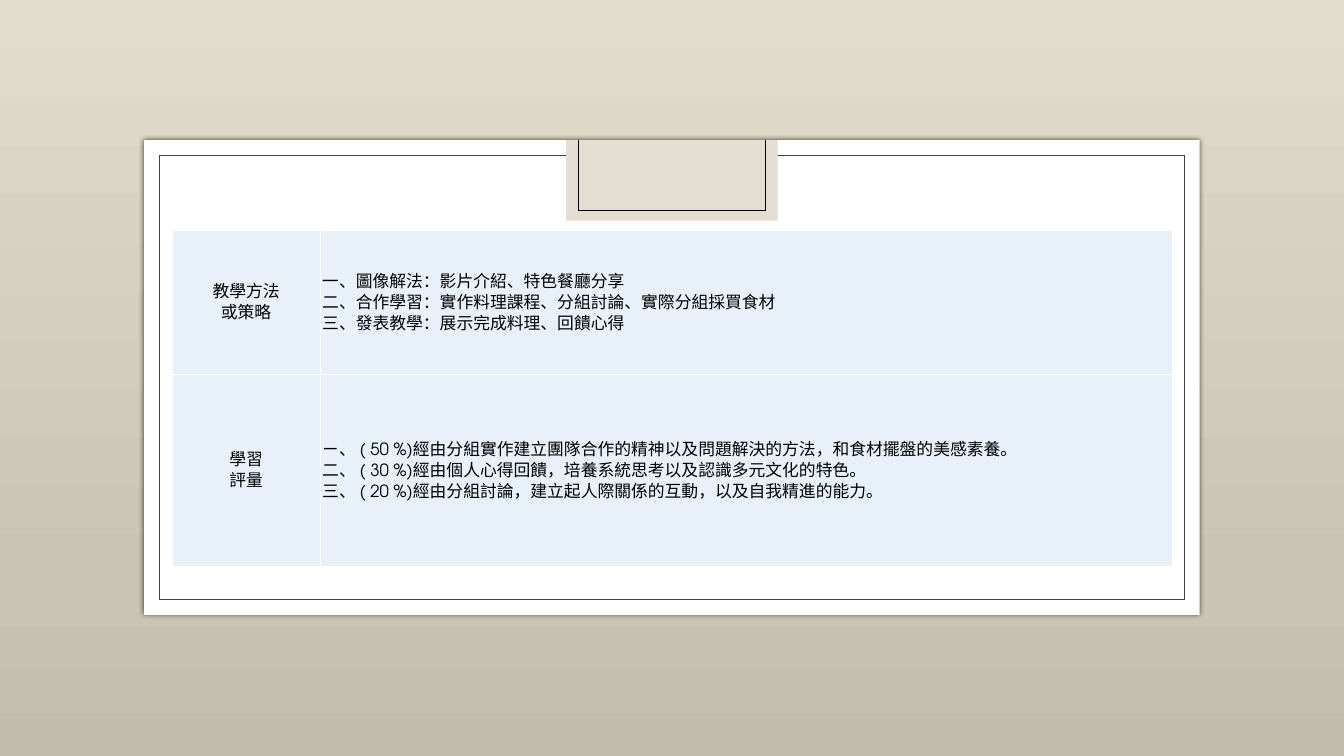
from copy import deepcopy

from lxml import etree
from pptx import Presentation
from pptx import util as u
from pptx.dml.color import RGBColor
from pptx.enum import shapes, text
from pptx.oxml.ns import nsdecls, qn

COLORS = {
    "sky": "E2DCCA", "sand": "CAC4B2", "ground": "C2BCAC",
    "card": "FFFFFF", "frame": "404040", "tab": "E3DED1",
    "ink": "000000", "cell": "E8F1FA", "border": "FFFFFF",
}
CENTER, JUSTIFY, LEFT = text.PP_ALIGN.CENTER, text.PP_ALIGN.JUSTIFY, text.PP_ALIGN.LEFT
ROWS = [
    [
        [("教學方法", CENTER, 0), ("或策略", CENTER, 0)],
        [
            ("一、圖像解法：影片介紹、特色餐廳分享", JUSTIFY, 0.32),
            ("二、合作學習：實作料理課程、分組討論、實際分組採買食材", JUSTIFY, 0.32),
            ("三、發表教學：展示完成料理、回饋心得", JUSTIFY, 0),
        ],
    ],
    [
        [("學習", CENTER, 0), ("評量", CENTER, 0)],
        [
            ("ㄧ、 ( 50 %)經由分組實作建立團隊合作的精神以及問題解決的方法，和食材擺盤的美感素養。", LEFT, 0.37),
            ("二、 ( 30 %)經由個人心得回饋，培養系統思考以及認識多元文化的特色。", LEFT, 0),
            ("三、 ( 20 %)經由分組討論，建立起人際關係的互動，以及自我精進的能力。", LEFT, 0.37),
        ],
    ],
]


def rgb(name):
    return RGBColor.from_string(COLORS[name])


def apply(target, values):
    for name, value in values.items():
        setattr(target, name, value)


class SlideBuilder:
    font = {"name": "TeX Gyre Adventor", "size": u.Pt(12), "bold": False}
    cell = {
        "vertical_anchor": text.MSO_ANCHOR.MIDDLE,
        "margin_left": u.Inches(0.02), "margin_right": u.Inches(0.02),
        "margin_top": 0, "margin_bottom": 0,
    }

    def __init__(self, presentation):
        self.width = presentation.slide_width
        self.height = presentation.slide_height
        self.slide = presentation.slides.add_slide(presentation.slide_layouts[6])

    def x(self, percent):
        return round(self.width * percent / 100)

    def y(self, percent):
        return round(self.height * percent / 100)

    def background(self, stops):
        fill = self.slide.background.fill
        fill.gradient()
        fill.gradient_angle = 270
        stop_list = self.slide.element.find(".//" + qn("a:gsLst"))
        stop_list.insert(1, deepcopy(stop_list[0]))
        for stop, (position, color) in zip(fill.gradient_stops, stops):
            stop.color.rgb = rgb(color)
            stop.position = position

    def rectangle(self, left, top, width, height, fill=None, line=None, shadow=False):
        shape = self.slide.shapes.add_shape(
            shapes.MSO_SHAPE.RECTANGLE,
            self.x(left), self.y(top), self.x(width), self.y(height))
        shape.shadow.inherit = False
        if fill:
            shape.fill.solid()
            shape.fill.fore_color.rgb = rgb(fill)
        else:
            shape.fill.background()
        if line:
            shape.line.color.rgb = rgb(line)
            shape.line.width = u.Pt(0.5)
        else:
            shape.line.fill.background()
        if shadow:
            effects = shape.element.spPr.find(qn("a:effectLst"))
            effects.append(etree.fromstring(
                f'<a:outerShdw {nsdecls("a")} blurRad="{u.Pt(4)}" dist="0" '
                f'algn="ctr" rotWithShape="0"><a:srgbClr val="{COLORS["ink"]}">'
                '<a:alpha val="66000"/></a:srgbClr></a:outerShdw>'))

    def line(self, start, end):
        connector = self.slide.shapes.add_connector(
            shapes.MSO_CONNECTOR.STRAIGHT,
            self.x(start[0]), self.y(start[1]), self.x(end[0]), self.y(end[1]))
        connector.line.color.rgb = rgb("ink")
        connector.line.width = u.Pt(0.5)
        etree.SubElement(connector.element.spPr, qn("a:effectLst"))

    def table(self, left, top, widths, heights, rows):
        table = self.slide.shapes.add_table(
            len(heights), len(widths), self.x(left), self.y(top),
            self.x(sum(widths)), self.y(sum(heights))).table
        apply(table, {"first_row": False, "horz_banding": False})
        for column, width in zip(table.columns, widths):
            column.width = self.x(width)
        for row, height, contents in zip(table.rows, heights, rows):
            row.height = self.y(height)
            for cell, paragraphs in zip(row.cells, contents):
                self.fill_cell(cell, paragraphs)

    def fill_cell(self, cell, paragraphs):
        apply(cell, self.cell)
        properties = cell._tc.get_or_add_tcPr()
        for side in ("lnL", "lnR", "lnT", "lnB"):
            properties.append(etree.fromstring(
                f'<a:{side} {nsdecls("a")} w="{u.Pt(1)}"><a:solidFill>'
                f'<a:srgbClr val="{COLORS["border"]}"/></a:solidFill></a:{side}>'))
        cell.fill.solid()
        cell.fill.fore_color.rgb = rgb("cell")
        for index, (wording, alignment, indent) in enumerate(paragraphs):
            frame = cell.text_frame
            paragraph = frame.add_paragraph() if index else frame.paragraphs[0]
            apply(paragraph, {"alignment": alignment, "line_spacing": u.Pt(15)})
            if indent:
                margin = u.Inches(indent)
                layout = paragraph._p.get_or_add_pPr()
                layout.set("marL", str(margin))
                layout.set("indent", str(-margin))
            run = paragraph.add_run()
            run.text = wording
            apply(run.font, self.font)
            run.font.color.rgb = rgb("ink")


def main():
    presentation = Presentation()
    apply(presentation, {"slide_width": u.Inches(13.33), "slide_height": u.Inches(7.5)})
    builder = SlideBuilder(presentation)
    builder.background([(0, "sky"), (0.77, "sand"), (1, "ground")])

    card_top = 18.53
    builder.rectangle(10.73, card_top, 78.54, 62.8, fill="card", shadow=True)
    builder.rectangle(11.85, 20.53, 76.3, 58.8, line="frame")
    builder.rectangle(42.13, card_top, 15.74, 10.67, fill="tab")

    left, right, bottom = 43.03, 56.97, 27.87
    corners = [(left, card_top), (left, bottom), (right, bottom), (right, card_top)]
    for start, end in zip(corners, corners[1:]):
        builder.line(start, end)

    builder.table(12.8, 30.53, [11.03, 63.39], [19.0, 25.4], ROWS)
    presentation.save("out.pptx")


if __name__ == "__main__":
    main()
